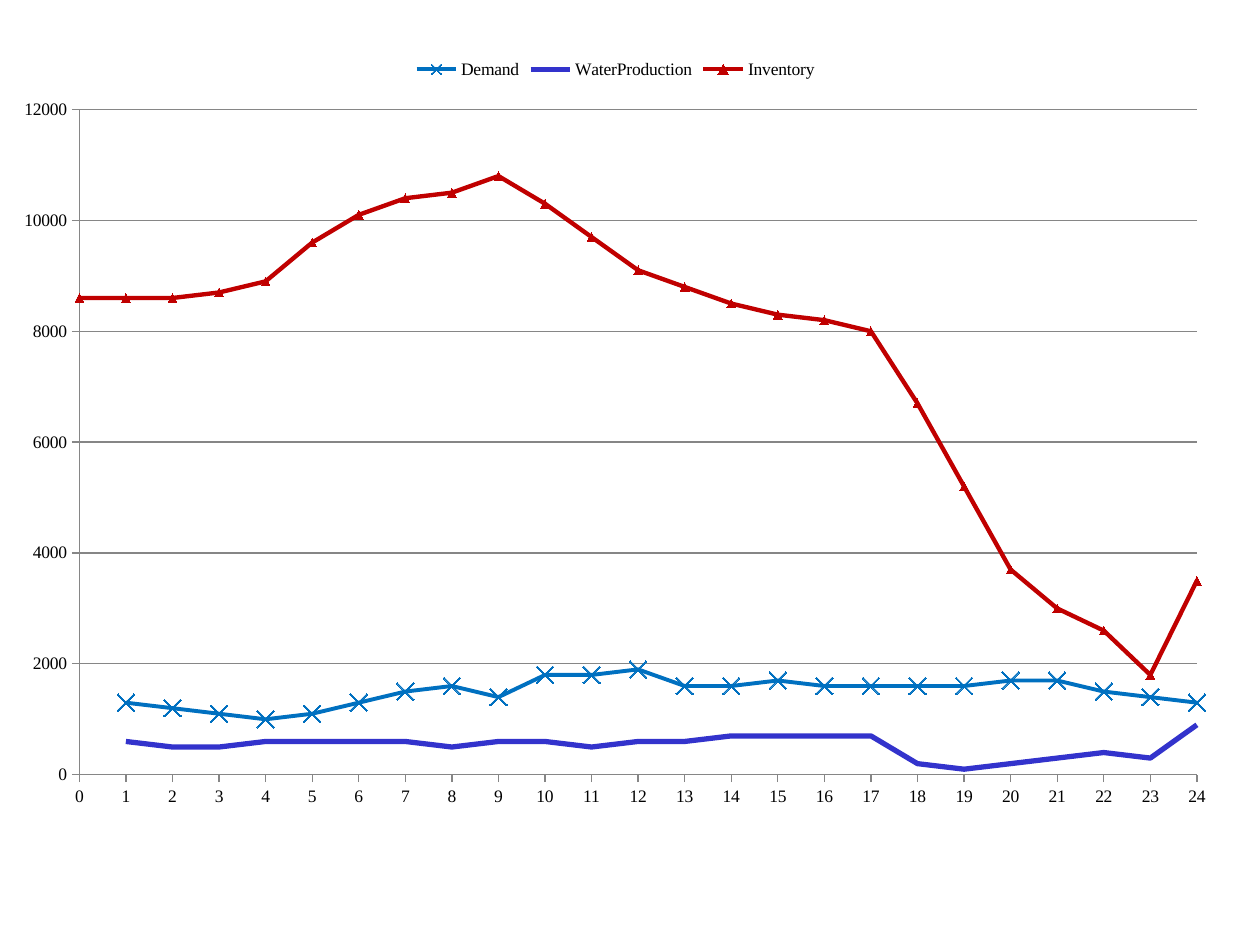
from lxml import etree
from pptx import Presentation
from pptx.chart.data import XyChartData
from pptx.dml.color import RGBColor
from pptx.enum import chart as c
from pptx.oxml import parse_xml
from pptx.oxml.ns import nsdecls
from pptx.util import Inches, Pt

SERIES = [
    {"name": "Demand", "color": "0070C0", "width": 2.25,
     "marker": c.XL_MARKER_STYLE.X, "marker_size": 10,
     "values": [None, 1300, 1200, 1100, 1000, 1100, 1300, 1500, 1600, 1400, 1800, 1800, 1900,
                1600, 1600, 1700, 1600, 1600, 1600, 1600, 1700, 1700, 1500, 1400, 1300]},
    {"name": "WaterProduction", "color": "3333CC", "width": 3,
     "marker": c.XL_MARKER_STYLE.NONE, "marker_size": 5,
     "values": [None, 600, 500, 500, 600, 600, 600, 600, 500, 600, 600, 500, 600,
                600, 700, 700, 700, 700, 200, 100, 200, 300, 400, 300, 900]},
    {"name": "Inventory", "color": "C00000", "width": 2.5,
     "marker": c.XL_MARKER_STYLE.TRIANGLE, "marker_size": 5,
     "values": [8600, 8600, 8600, 8700, 8900, 9600, 10100, 10400, 10500, 10800, 10300, 9700,
                9100, 8800, 8500, 8300, 8200, 8000, 6700, 5200, 3700, 3000, 2600, 1800, 3500]},
]
PLOT_BOX = {"x": Inches(0.63), "y": Inches(0.51), "w": Inches(8.87), "h": Inches(5.28)}


def rgb(color):
    """Turn a hex string into a colour."""
    return RGBColor.from_string(color)


def set_values(target, values):
    """Set each named attribute on the target."""
    for name, value in values.items():
        setattr(target, name, value)


def format_line(line, color, width):
    """Give a line its colour and width in points."""
    line.color.rgb = rgb(color)
    line.width = Pt(width)


def format_axis(axis, maximum, step, gridlines):
    """Set the scale, ticks and lines of one axis."""
    set_values(axis, {
        "minimum_scale": 0, "maximum_scale": maximum, "major_unit": step,
        "has_major_gridlines": gridlines, "has_title": False,
        "major_tick_mark": c.XL_TICK_MARK.OUTSIDE,
        "minor_tick_mark": c.XL_TICK_MARK.NONE,
    })
    set_values(axis.tick_labels, {"number_format": "General", "number_format_is_linked": False})
    format_line(axis.format.line, "868686", 0.75)
    if gridlines:
        format_line(axis.major_gridlines.format.line, "868686", 0.75)


def format_series(series, style):
    """Give one series its line and markers."""
    series.smooth = False
    format_line(series.format.line, style["color"], style["width"])
    set_values(series.marker, {"style": style["marker"], "size": style["marker_size"]})
    if style["marker"] != c.XL_MARKER_STYLE.NONE:
        series.marker.format.fill.solid()
        series.marker.format.fill.fore_color.rgb = rgb(style["color"])
        format_line(series.marker.format.line, style["color"], 0.75)


def drop_empty_points(series):
    """Remove the cached points that hold no number."""
    for point in series._element.findall("{*}yVal//{*}pt"):
        if point.findtext("{*}v") in (None, "", "None"):
            point.getparent().remove(point)


def place_plot(chart, box, width, height):
    """Fix the inner plot area within a chart of the given size."""
    plot_area = chart.plots[0]._element.getparent()
    for old_layout in plot_area.findall("{*}layout"):
        plot_area.remove(old_layout)
    layout = parse_xml(f"<c:layout {nsdecls('c')}><c:manualLayout/></c:layout>")
    sizes = {"x": width, "y": height, "w": width, "h": height}
    fractions = {name: length / sizes[name] for name, length in box.items()}
    settings = {"layoutTarget": "inner", "xMode": "edge", "yMode": "edge", **fractions}
    for name, value in settings.items():
        tag = layout[0].tag.replace("manualLayout", name)
        etree.SubElement(layout[0], tag).set("val", str(value))
    plot_area.insert(0, layout)


def add_water_chart(slide, left, top, width, height):
    """Add the hourly water chart in the given box."""
    data = XyChartData()
    for style in SERIES:
        series = data.add_series(style["name"])
        for hour, value in enumerate(style["values"]):
            series.add_data_point(hour, value)
    chart = slide.shapes.add_chart(
        c.XL_CHART_TYPE.XY_SCATTER_LINES, left, top, width, height, data).chart
    set_values(chart, {"has_title": False, "has_legend": True})
    set_values(chart.font, {"name": "Times New Roman", "size": Pt(10)})
    chart.font.color.rgb = rgb("000000")
    set_values(chart.legend, {"position": c.XL_LEGEND_POSITION.TOP, "include_in_layout": False})
    chart.plots[0].vary_by_categories = False
    format_axis(chart.category_axis, 24, 1, False)
    format_axis(chart.value_axis, 12000, 2000, True)
    for series, style in zip(chart.plots[0].series, SERIES):
        format_series(series, style)
        drop_empty_points(series)
    place_plot(chart, PLOT_BOX, width, height)


def main():
    """Build the slide and save it."""
    presentation = Presentation()
    set_values(presentation, {"slide_width": Inches(10), "slide_height": Inches(7.5)})
    slide = presentation.slides.add_slide(presentation.slide_layouts[6])
    add_water_chart(slide, Inches(0), Inches(0.36), Inches(9.77), Inches(6.17))
    presentation.save("out.pptx")


if __name__ == "__main__":
    main()
